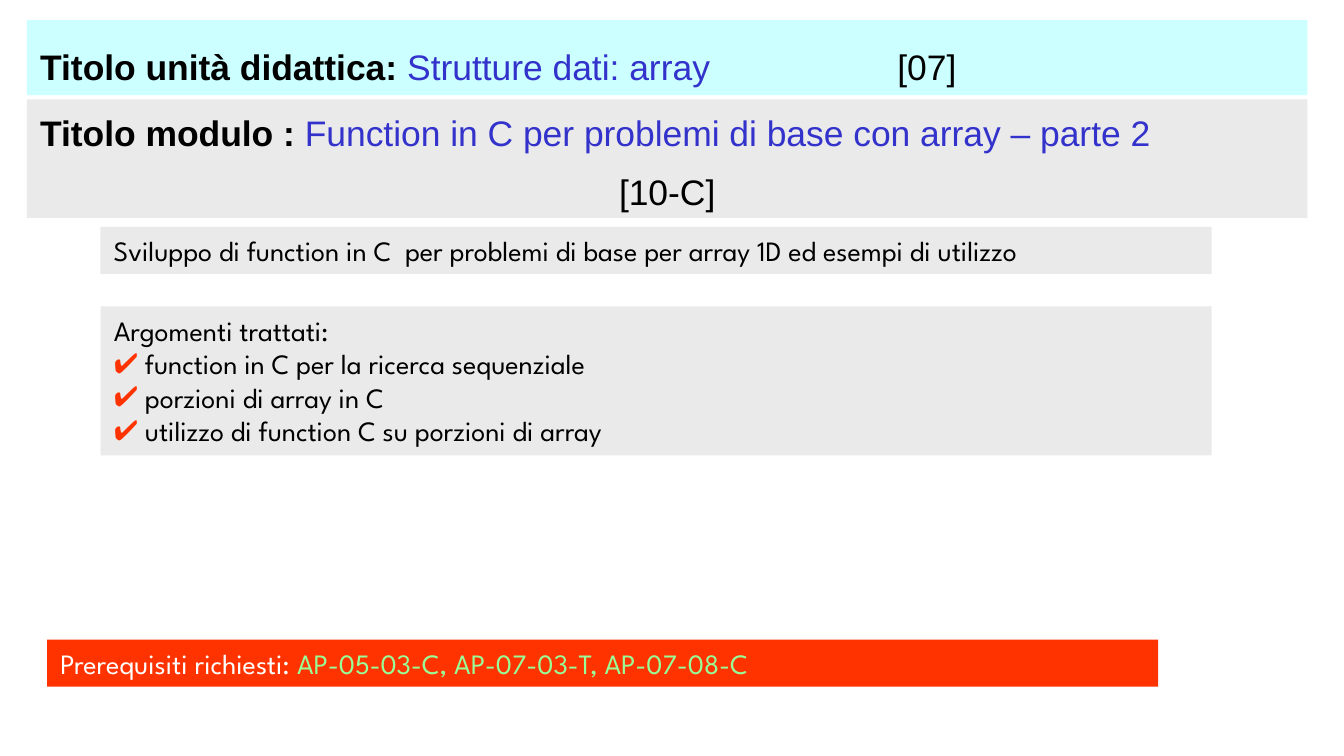
from lxml.etree import SubElement
from pptx import Presentation
from pptx.dml.color import RGBColor
from pptx.enum.shapes import MSO_SHAPE as Preset
from pptx.enum.text import MSO_ANCHOR as Anchor, MSO_AUTO_SIZE as AutoSize, PP_ALIGN as Align
from pptx.oxml.ns import qn
from pptx.util import Cm, Pt

BLACK, WHITE, BLUE = "000000", "FFFFFF", "3333CC"
CYAN, GREY, RED, GREEN = "CCFFFF", "EAEAEA", "FF3300", "99FF99"
HEADING = {"name": "Arial", "size": Pt(19)}
BODY = {"name": "League Spartan", "size": Pt(15)}


def color(hex_string):
    return RGBColor.from_string(hex_string)


def set_all(target, values):
    for name, value in values.items():
        setattr(target, name, value)


def place_panel(shape, box, fill, top_inset=0.13):
    """Moves a shape to box (left, top, width, height in cm) and formats its frame."""
    set_all(shape, dict(zip(("left", "top", "width", "height"), map(Cm, box))))
    shape.fill.solid()
    shape.fill.fore_color.rgb = color(fill)
    shape.line.fill.background()
    set_all(shape.text_frame, {
        "margin_left": Cm(0.25), "margin_right": Cm(0.25),
        "margin_top": Cm(top_inset), "margin_bottom": Cm(0.13),
        "word_wrap": True, "auto_size": AutoSize.NONE, "vertical_anchor": Anchor.TOP,
    })
    return shape.text_frame


def add_panel(slide, box, fill, top_inset=0.13):
    shape = slide.shapes.add_shape(Preset.RECTANGLE, 0, 0, 0, 0)
    shape.shadow.inherit = False
    return place_panel(shape, box, fill, top_inset)


def write(paragraph, runs, font, align=Align.LEFT, space_before=0):
    """Fills a paragraph with (text, colour, bold) runs."""
    set_all(paragraph, {"alignment": align, "space_before": Pt(space_before),
                        "space_after": Pt(0), "line_spacing": 1.0})
    for text, hex_string, bold in runs:
        run = paragraph.add_run()
        run.text = text
        set_all(run.font, {**font, "bold": bold})
        run.font.color.rgb = color(hex_string)


def set_bullet(paragraph, character=None, indent=0):
    properties = paragraph._p.get_or_add_pPr()
    properties.set("marL", str(Cm(indent)))
    properties.set("indent", str(-Cm(indent)))
    if character is None:
        SubElement(properties, qn("a:buNone"))
        return
    bullet_color = SubElement(properties, qn("a:buClr"))
    SubElement(bullet_color, qn("a:srgbClr"), val=RED)
    SubElement(properties, qn("a:buChar"), char=character)


def add_tab_stop(paragraph, position):
    tabs = SubElement(paragraph._p.get_or_add_pPr(), qn("a:tabLst"))
    SubElement(tabs, qn("a:tab"), pos=str(Cm(position)), algn="l")


def unit_band(slide, box):
    frame = place_panel(slide.shapes.title, box, CYAN, top_inset=0.48)
    paragraph = frame.paragraphs[0]
    write(paragraph, [("Titolo unità didattica: ", BLACK, True),
                      ("Strutture dati: array\t", BLUE, False),
                      ("[07]", BLACK, False)], HEADING)
    add_tab_stop(paragraph, 16.2)


def module_band(slide, box):
    frame = add_panel(slide, box, GREY, top_inset=0.22)
    write(frame.paragraphs[0], [
        ("Titolo modulo : ", BLACK, True),
        ("Function in C per problemi di base con array – parte 2", BLUE, False)], HEADING)
    write(frame.add_paragraph(), [("[10-C]", BLACK, False)], HEADING, Align.CENTER, 8.7)


def text_panel(slide, box, fill, runs):
    write(add_panel(slide, box, fill).paragraphs[0], runs, BODY)


def topics_panel(slide, box, heading, topics):
    frame = place_panel(slide.placeholders[1], box, GREY)
    write(frame.paragraphs[0], [(heading, BLACK, False)], BODY)
    set_bullet(frame.paragraphs[0])
    for topic in topics:
        paragraph = frame.add_paragraph()
        write(paragraph, [(topic, BLACK, False)], BODY)
        set_bullet(paragraph, "✔", 0.59)


def main():
    presentation = Presentation()
    set_all(presentation, {"slide_width": Cm(25.4), "slide_height": Cm(14.29)})
    slide = presentation.slides.add_slide(presentation.slide_layouts[1])
    unit_band(slide, (0.51, 0.38, 24.2, 1.42))
    module_band(slide, (0.51, 1.88, 24.2, 2.24))
    text_panel(slide, (1.9, 4.29, 21, 0.89), GREY, [
        ("Sviluppo di function in C  per problemi di base per array 1D ed esempi di utilizzo",
         BLACK, False)])
    topics_panel(slide, (1.9, 5.79, 21, 2.82), "Argomenti trattati:", [
        "function in C per la ricerca sequenziale",
        "porzioni di array in C",
        "utilizzo di function C su porzioni di array"])
    text_panel(slide, (0.89, 12.09, 21, 0.89), RED, [
        ("Prerequisiti richiesti: ", WHITE, False),
        ("AP-05-03-C, AP-07-03-T, AP-07-08-C", GREEN, False)])
    presentation.save("out.pptx")


if __name__ == "__main__":
    main()
